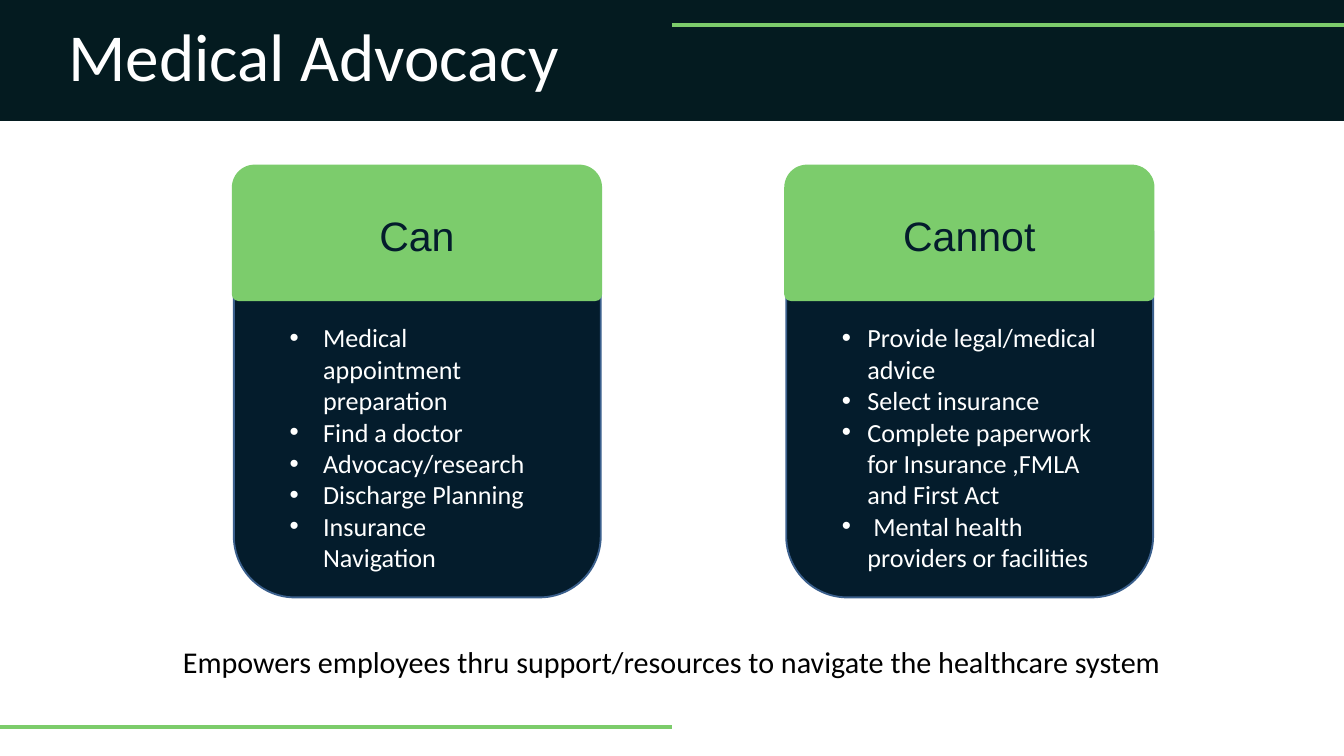
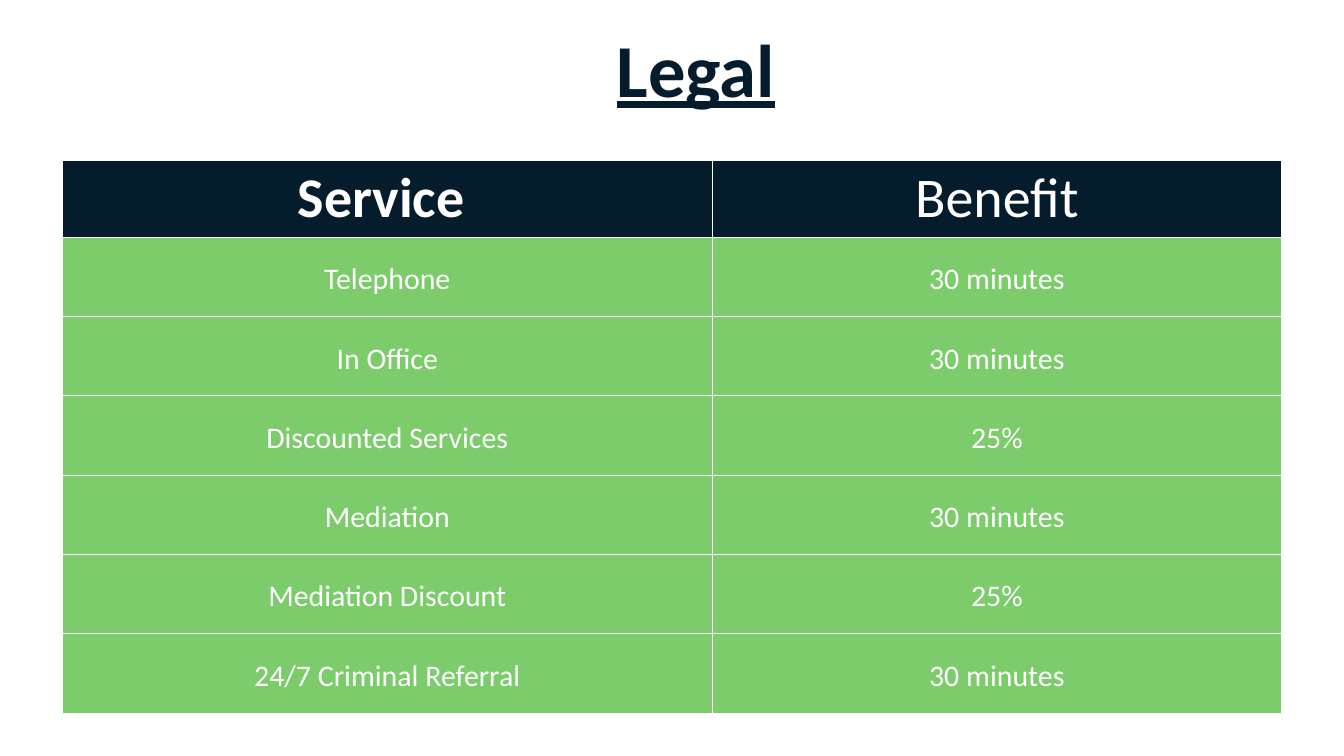
import pptx
import pptx.util
import pptx.dml.color
import pptx.enum.shapes
import pptx.enum.text
import pptx.oxml
import pptx.oxml.ns
from lxml import etree

Inches = pptx.util.Inches
Pt = pptx.util.Pt
SHAPES = pptx.enum.shapes.MSO_SHAPE
ALIGN = pptx.enum.text.PP_ALIGN
MIDDLE = pptx.enum.text.MSO_ANCHOR.MIDDLE
qn = pptx.oxml.ns.qn

COLORS = {
    "band": "041B20",
    "navy": "041C2C",
    "green": "7CCC6C",
    "rule": "7CCC6B",
    "outline": "3A5F8C",
    "white": "FFFFFF",
    "black": "000000",
}
BODY_FONT = "Calibri"
HEADING_FONT = "Arial"

ADVOCACY_TITLE = "Medical Advocacy"
CARDS = [
    ("Can", 0.5, [
        "Medical appointment preparation",
        "Find a doctor",
        "Advocacy/research",
        "Discharge Planning",
        "Insurance Navigation",
    ]),
    ("Cannot", 0.38, [
        "Provide legal/medical advice",
        "Select insurance",
        "Complete paperwork for Insurance ,FMLA and First Act",
        " Mental health providers or facilities",
    ]),
]
SUMMARY = "Empowers employees thru support/resources to navigate the healthcare system"
RULES = [(0, 10.82), (10, 0.37)]

LEGAL_TITLE = "Legal"
SERVICES = [
    ("Service ", "Benefit"),
    ("Telephone", "30 minutes"),
    ("In Office", "30 minutes"),
    ("Discounted Services", "25%"),
    ("Mediation", "30 minutes"),
    ("Mediation Discount", "25%"),
    ("24/7 Criminal Referral", "30 minutes"),
]
COLUMN_WIDTHS = (9.67, 8.47)
HEADER_HEIGHT, ROW_HEIGHT = 1.15, 1.18

CARD_LEFT, CARD_TOP, CARD_STEP = 3.48, 2.54, 8.22
CARD_WIDTH, CARD_HEIGHT = 5.46, 6.35


def color(name):
    return pptx.dml.color.RGBColor.from_string(COLORS[name])


def style(paragraph, size, shade, font=BODY_FONT, bold=False, underline=False):
    for span in paragraph.runs:
        span.font.name = font
        span.font.size = Pt(size)
        span.font.bold = bold
        span.font.underline = underline
        span.font.color.rgb = color(shade)


def add_text(page, area, lines, size, shade, align=ALIGN.LEFT, indent=0, **look):
    box = page.shapes.add_textbox(*map(Inches, area))
    frame = box.text_frame
    frame.word_wrap = True
    frame.text = "\n".join(lines)
    for paragraph in frame.paragraphs:
        paragraph.alignment = align
        if indent:
            add_bullet(paragraph, indent)
        style(paragraph, size, shade, **look)


def add_bullet(paragraph, indent):
    properties = paragraph._p.get_or_add_pPr()
    properties.set("marL", str(Inches(indent)))
    properties.set("indent", str(-Inches(indent)))
    etree.SubElement(properties, qn("a:buFont"), typeface=HEADING_FONT)
    etree.SubElement(properties, qn("a:buChar"), char="•")


def add_block(page, kind, area, fill, outline=None):
    block = page.shapes.add_shape(kind, *map(Inches, area))
    block.shadow.inherit = False
    block.fill.solid()
    block.fill.fore_color.rgb = color(fill)
    if outline:
        block.line.color.rgb = color(outline)
        block.line.width = Pt(2)
    else:
        block.line.fill.background()
    return block


def add_rule(page, left, top):
    rule = page.shapes.add_connector(
        pptx.enum.shapes.MSO_CONNECTOR.STRAIGHT,
        Inches(left), Inches(top), Inches(left + 10), Inches(top))
    rule.line.color.rgb = color("rule")
    rule.line.width = Pt(4.5)
    etree.SubElement(rule._element.spPr, qn("a:effectLst"))


def add_card(page, left, heading, indent, items):
    add_block(page, SHAPES.ROUNDED_RECTANGLE,
              (left, CARD_TOP, CARD_WIDTH, CARD_HEIGHT), "navy", "outline")
    header = add_block(page, SHAPES.ROUND_2_SAME_RECTANGLE,
                       (left - 0.03, CARD_TOP - 0.09, CARD_WIDTH + 0.05, 2.03), "green")
    header.adjustments[0] = 0.167
    header.adjustments[1] = 0.049
    frame = header.text_frame
    frame.text = heading
    frame.vertical_anchor = MIDDLE
    frame.paragraphs[0].alignment = ALIGN.CENTER
    style(frame.paragraphs[0], 44, "navy", HEADING_FONT)
    add_text(page, (left + 0.73, 4.74, 3.99, 3.87), items, 28, "white", indent=indent)


def add_borders(cell):
    properties = cell._tc.get_or_add_tcPr()
    for side in ("lnL", "lnR", "lnT", "lnB"):
        border = etree.SubElement(properties, qn("a:" + side), w=str(Pt(1)))
        fill = etree.SubElement(border, qn("a:solidFill"))
        etree.SubElement(fill, qn("a:srgbClr"), val=COLORS["white"])


def fill_cell(cell, text, is_header, bold):
    add_borders(cell)
    cell.fill.solid()
    cell.fill.fore_color.rgb = color("navy" if is_header else "green")
    cell.margin_left = cell.margin_right = cell.margin_top = cell.margin_bottom = 0
    cell.vertical_anchor = MIDDLE
    cell.text_frame.text = text
    paragraph = cell.text_frame.paragraphs[0]
    paragraph.alignment = ALIGN.CENTER
    if not is_header:
        paragraph.line_spacing = 1.15
    style(paragraph, 60 if is_header else 32, "white", bold=bold)


def add_services(page):
    heights = [HEADER_HEIGHT] + [ROW_HEIGHT] * (len(SERVICES) - 1)
    table = page.shapes.add_table(
        len(SERVICES), len(COLUMN_WIDTHS), Inches(0.93), Inches(2.38),
        Inches(sum(COLUMN_WIDTHS)), Inches(sum(heights))).table
    for column, width in zip(table.columns, COLUMN_WIDTHS):
        column.width = Inches(width)
    for row, height in zip(table.rows, heights):
        row.height = Inches(height)
    for row, texts in enumerate(SERVICES):
        for column, text in enumerate(texts):
            fill_cell(table.cell(row, column), text, row == 0, row == column == 0)


def build_advocacy(page):
    add_block(page, SHAPES.RECTANGLE, (0, 0, 20, 1.8), "band")
    for left, top in RULES:
        add_rule(page, left, top)
    add_text(page, (0.92, 0.17, 8.5, 1.31), [ADVOCACY_TITLE], 72, "white")
    for number, card in enumerate(CARDS):
        add_card(page, CARD_LEFT + number * CARD_STEP, *card)
    add_text(page, (2.18, 9.53, 15.63, 1.1), [SUMMARY], 32.3, "black", ALIGN.CENTER)


def build_legal(page):
    add_text(page, (9.08, 0.29, 2.83, 1.45), [LEGAL_TITLE], 80, "navy",
             bold=True, underline=True)
    add_services(page)


def main():
    deck = pptx.Presentation()
    deck.slide_width = Inches(20)
    deck.slide_height = Inches(11.25)
    for build in (build_advocacy, build_legal):
        build(deck.slides.add_slide(deck.slide_layouts[6]))
    deck.save("out.pptx")


if __name__ == "__main__":
    main()
